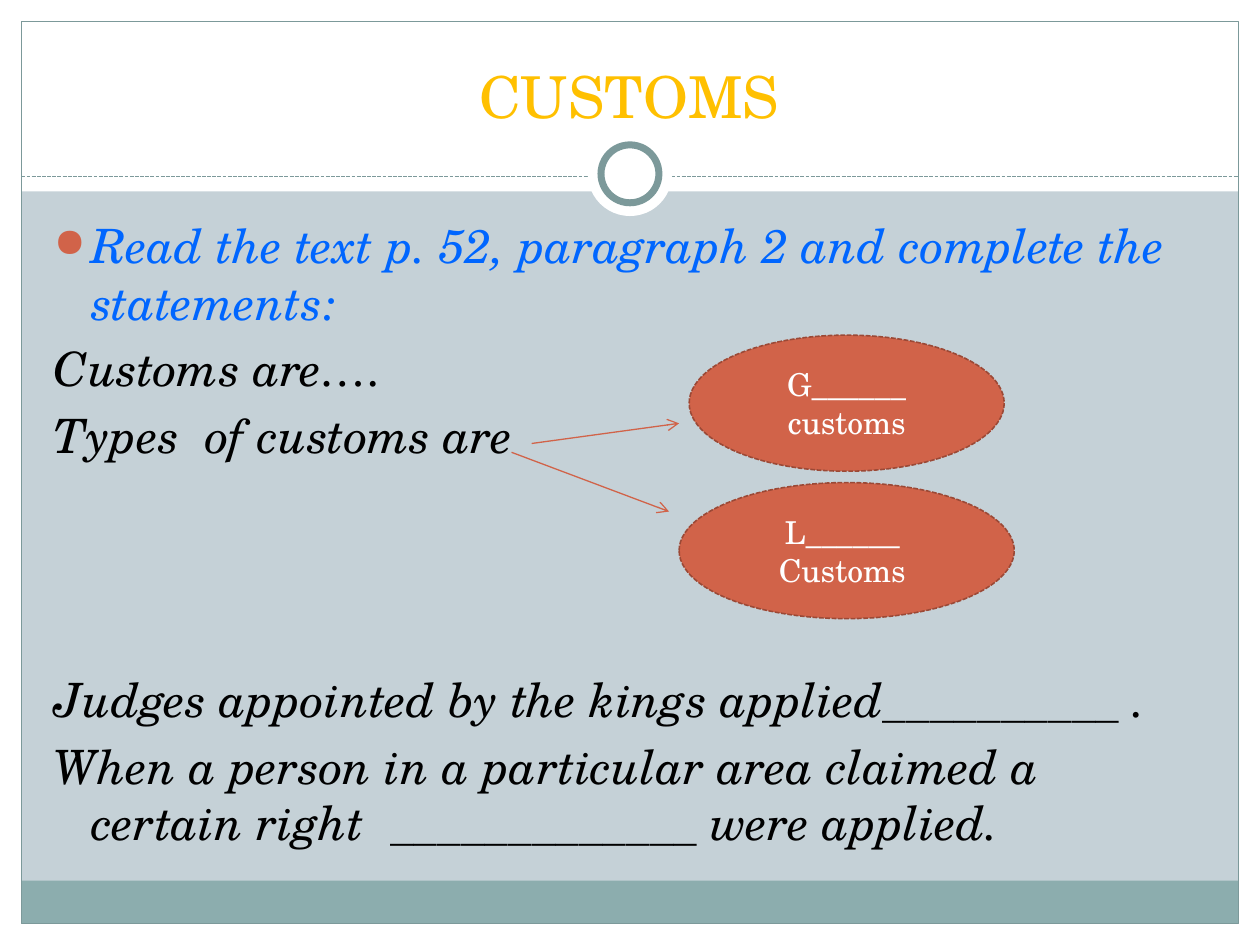
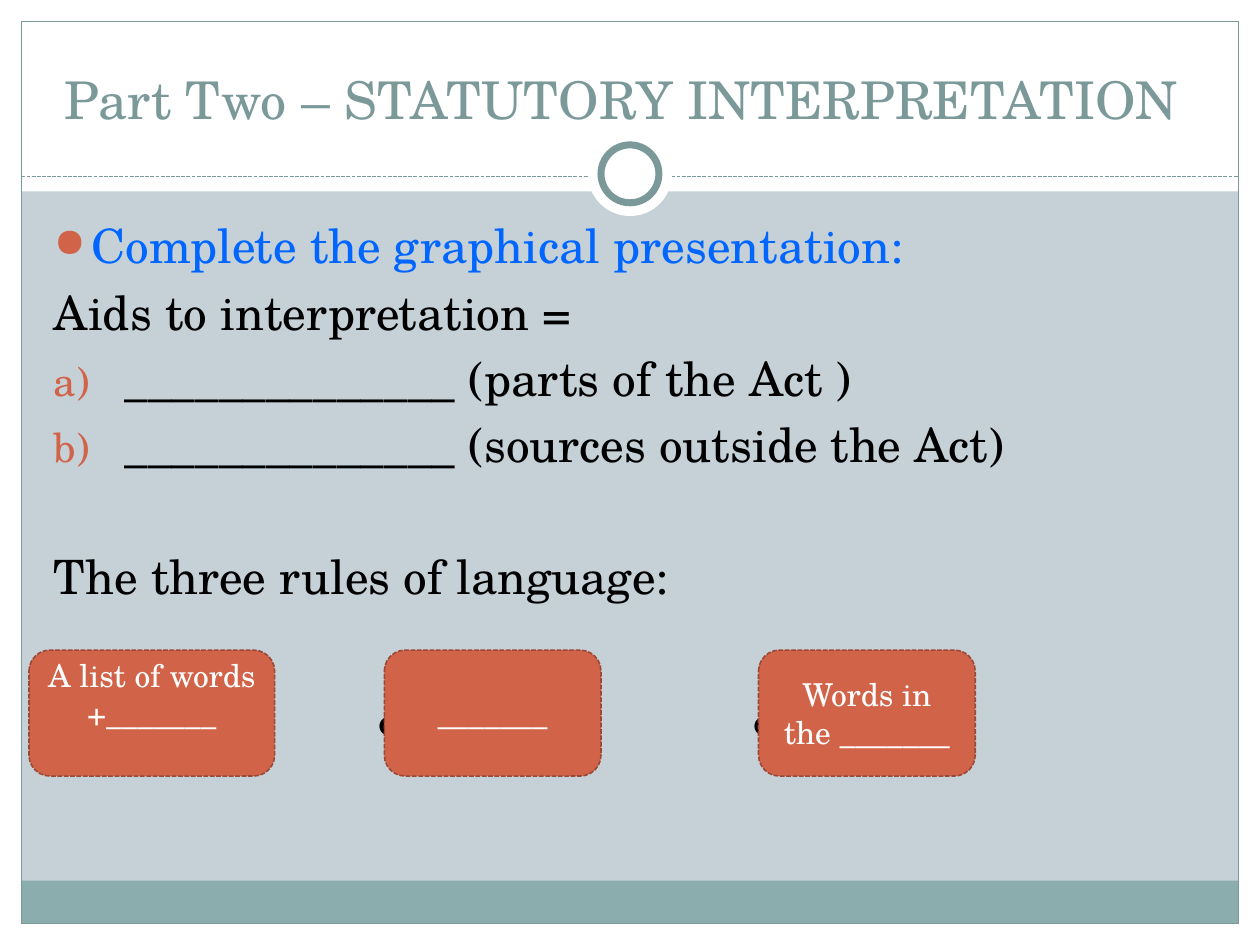
import dataclasses

import lxml.etree
import pptx
import pptx.dml.color
import pptx.enum.dml
import pptx.enum.shapes
import pptx.enum.text
import pptx.oxml.ns
import pptx.util

Inches = pptx.util.Inches
Pt = pptx.util.Pt
SHAPE = pptx.enum.shapes.MSO_SHAPE
ANCHOR = pptx.enum.text.MSO_ANCHOR
ALIGN = pptx.enum.text.PP_ALIGN
DASH = pptx.enum.dml.MSO_LINE.SQUARE_DOT


@dataclasses.dataclass(frozen=True)
class Theme:
    font: str = "TeX Gyre Schola"
    background: str = "C5D1D7"
    white: str = "FFFFFF"
    black: str = "000000"
    band: str = "8CADAE"
    frame: str = "7C999A"
    accent: str = "D16349"
    accent_edge: str = "9B4936"
    task: str = "0066FF"
    gold: str = "FFC000"
    title_size: float = 33
    long_title_size: float = 29.7
    body_size: float = 27
    label_size: float = 18
    hairline: float = 0.75
    edge: float = 0.9
    ring: float = 4
    bullet_percent: int = 85
    para_gap: float = 5.4
    line_pitch: float = 37.85  # one body line with its paragraph gap


THEME = Theme()
SLIDE_W, SLIDE_H = 10, 7.5
MARGIN = 0.17
TITLE_BOX = (0.33, 0.25, 9.33, 0.83)
BODY_BOX = (0.33, 1.67, 9.3, 5)


def rgb(color):
    return pptx.dml.color.RGBColor.from_string(color)


def sub(parent, tag, **attrs):
    return lxml.etree.SubElement(parent, pptx.oxml.ns.qn(tag), attrs)


def add_run(p, text, size, color, italic=False):
    r = p.add_run()
    r.text = text
    r.font.name = THEME.font
    r.font.size = Pt(size)
    r.font.italic = italic
    r.font.color.rgb = rgb(color)


def paragraphs(tf, count):
    return [tf.paragraphs[0]] + [tf.add_paragraph() for _ in range(count - 1)]


def add_preset(slide, kind, box, fill=None, line=None, width=0, dash=None):
    sp = slide.shapes.add_shape(kind, *map(Inches, box))
    sp.shadow.inherit = False
    if fill:
        sp.fill.solid()
        sp.fill.fore_color.rgb = rgb(fill)
    else:
        sp.fill.background()
    if line:
        sp.line.color.rgb = rgb(line)
        sp.line.width = Pt(width)
        sp.line.dash_style = dash
    else:
        sp.line.fill.background()
    return sp


def add_line(slide, start, end, color, dash=None, arrow=False):
    cxn = slide.shapes.add_connector(
        pptx.enum.shapes.MSO_CONNECTOR.STRAIGHT, *map(Inches, start + end))
    cxn.line.color.rgb = rgb(color)
    cxn.line.width = Pt(THEME.hairline)
    cxn.line.dash_style = dash
    if arrow:
        sub(cxn.line._get_or_add_ln(), "a:tailEnd", type="arrow")
    sub(cxn._element.spPr, "a:effectLst")


def add_text_box(slide, box, anchor=ANCHOR.TOP):
    tf = slide.shapes.add_textbox(*map(Inches, box)).text_frame
    tf.word_wrap = True
    tf.vertical_anchor = anchor
    return tf


def add_label(slide, kind, box, lines):
    """Accent shape with a dashed edge and centred white text."""
    sp = add_preset(slide, kind, box, THEME.accent, THEME.accent_edge,
                    THEME.edge, DASH)
    tf = sp.text_frame
    tf.word_wrap = True
    tf.vertical_anchor = ANCHOR.MIDDLE
    for p, text in zip(paragraphs(tf, len(lines)), lines):
        p.alignment = ALIGN.CENTER
        add_run(p, text, THEME.label_size, THEME.white)
    return tf


def draw_frame(slide):
    """Background, white margins, footer band, outline and ring divider."""
    slide.background.fill.solid()
    slide.background.fill.fore_color.rgb = rgb(THEME.background)
    inner_w, inner_h = SLIDE_W - 2 * MARGIN, SLIDE_H - 2 * MARGIN
    right, bottom = SLIDE_W - MARGIN, SLIDE_H - MARGIN
    for box in ((0, bottom, SLIDE_W, MARGIN), (0, 0, SLIDE_W, 1.52),
                (0, 0, MARGIN, SLIDE_H), (right, 0, MARGIN, SLIDE_H)):
        add_preset(slide, SHAPE.RECTANGLE, box, THEME.white)
    add_preset(slide, SHAPE.RECTANGLE,
               (MARGIN, bottom - 0.34, inner_w, 0.34), THEME.band)
    add_preset(slide, SHAPE.RECTANGLE, (MARGIN, MARGIN, inner_w, inner_h),
               line=THEME.frame, width=THEME.hairline)
    add_line(slide, (MARGIN, 1.4), (right, 1.4), THEME.frame, DASH)
    center_x, center_y = SLIDE_W / 2, 1.38
    for size, line in ((0.67, None), (0.46, THEME.frame)):
        box = (center_x - size / 2, center_y - size / 2, size, size)
        add_preset(slide, SHAPE.OVAL, box, THEME.white, line, THEME.ring)


def add_title(slide, box, text, size, color):
    p = add_text_box(slide, box, ANCHOR.BOTTOM).paragraphs[0]
    p.alignment = ALIGN.CENTER
    add_run(p, text, size, color)


def format_paragraph(p, bullet, skip):
    """Hanging indent, optional bullet, and room for skipped lines above."""
    p.space_before = Pt(THEME.para_gap + skip * THEME.line_pitch)
    pPr = p._p.get_or_add_pPr()
    indent = Inches(0.56 if bullet == "letter" else 0.3)
    pPr.set("marL", str(indent))
    pPr.set("indent", str(-indent))
    if not bullet:
        sub(pPr, "a:buNone")
        return
    sub(sub(pPr, "a:buClr"), "a:srgbClr", val=THEME.accent)
    sub(pPr, "a:buSzPct", val=str(THEME.bullet_percent * 1000))
    if bullet == "letter":
        sub(pPr, "a:buAutoNum", type="alphaLcParenR")
    else:
        sub(pPr, "a:buChar", char="●")


def add_body(slide, box, items, italic=False):
    """Items are (text, bullet, skipped lines); a dot bullet marks the task."""
    tf = add_text_box(slide, box)
    for p, (text, bullet, skip) in zip(paragraphs(tf, len(items)), items):
        format_paragraph(p, bullet, skip)
        color = THEME.task if bullet == "dot" else THEME.black
        add_run(p, text, THEME.body_size, color, italic)


def draw_customs_types(slide, box):
    """Two arrows fanning out to the two kinds of customs."""
    x, y, w, h = box
    oval_h = 1.08
    add_line(slide, (x, y + 0.93), (x + 1.25, y + 1.4), THEME.accent, arrow=True)
    add_line(slide, (x + 0.16, y + 0.86), (x + 1.33, y + 0.7), THEME.accent,
             arrow=True)
    center_x = x + w - 1.33
    for oval_w, top, lines in (
            (2.5, y, ["G______ customs"]),
            (2.66, y + h - oval_h, ["L______ ", "Customs "])):
        add_label(slide, SHAPE.OVAL,
                  (center_x - oval_w / 2, top, oval_w, oval_h), lines)


def draw_language_rules(slide, box):
    """Three cards, with an ampersand tucked behind the last two."""
    x, y, w, h = box
    card_w = 1.72
    cards = ((0, 1.95, "A list of words +_______"),
             (2.82, card_w, "_______"),
             (w - card_w, card_w, "Words in the _______"))
    for left, _, _ in cards[1:]:
        tf = add_text_box(slide, (x + left - 0.05, y + 0.3, 0.4, 0.46),
                          ANCHOR.MIDDLE)
        tf.margin_left = tf.margin_right = 0
        add_run(tf.paragraphs[0], "&", THEME.body_size, THEME.black)
    frames = [add_label(slide, SHAPE.ROUNDED_RECTANGLE,
                        (x + left, y, width, h), [text])
              for left, width, text in cards]
    frames[0].margin_bottom = Inches(0.35)


def build_customs(slide):
    draw_frame(slide)
    add_title(slide, TITLE_BOX, "CUSTOMS", THEME.title_size, THEME.gold)
    add_body(slide, BODY_BOX, [
        ("Read the text p. 52, paragraph 2 and complete the statements:",
         "dot", 0),
        ("Customs are….", None, 0),
        ("Types  of customs are", None, 0),
        ("Judges appointed by the kings applied__________ .", None, 3),
        ("When a person in a particular area claimed a certain right  "
         "_____________ were applied.", None, 0),
    ], italic=True)
    draw_customs_types(slide, (4.06, 2.66, 3.99, 2.25))


def build_interpretation(slide):
    draw_frame(slide)
    add_title(slide, TITLE_BOX, "Part Two – STATUTORY INTERPRETATION ",
              THEME.long_title_size, THEME.frame)
    add_body(slide, BODY_BOX, [
        ("Complete the graphical presentation:", "dot", 0),
        ("Aids to interpretation =", None, 0),
        ("______________ (parts of the Act )", "letter", 0),
        ("______________ (sources outside the Act)", "letter", 0),
        ("The three rules of language:", None, 1),
    ])
    draw_language_rules(slide, (0.23, 5.16, 7.51, 1))


def main():
    prs = pptx.Presentation()
    prs.slide_width, prs.slide_height = Inches(SLIDE_W), Inches(SLIDE_H)
    for build in (build_customs, build_interpretation):
        build(prs.slides.add_slide(prs.slide_layouts[6]))
    prs.save("out.pptx")


if __name__ == "__main__":
    main()
